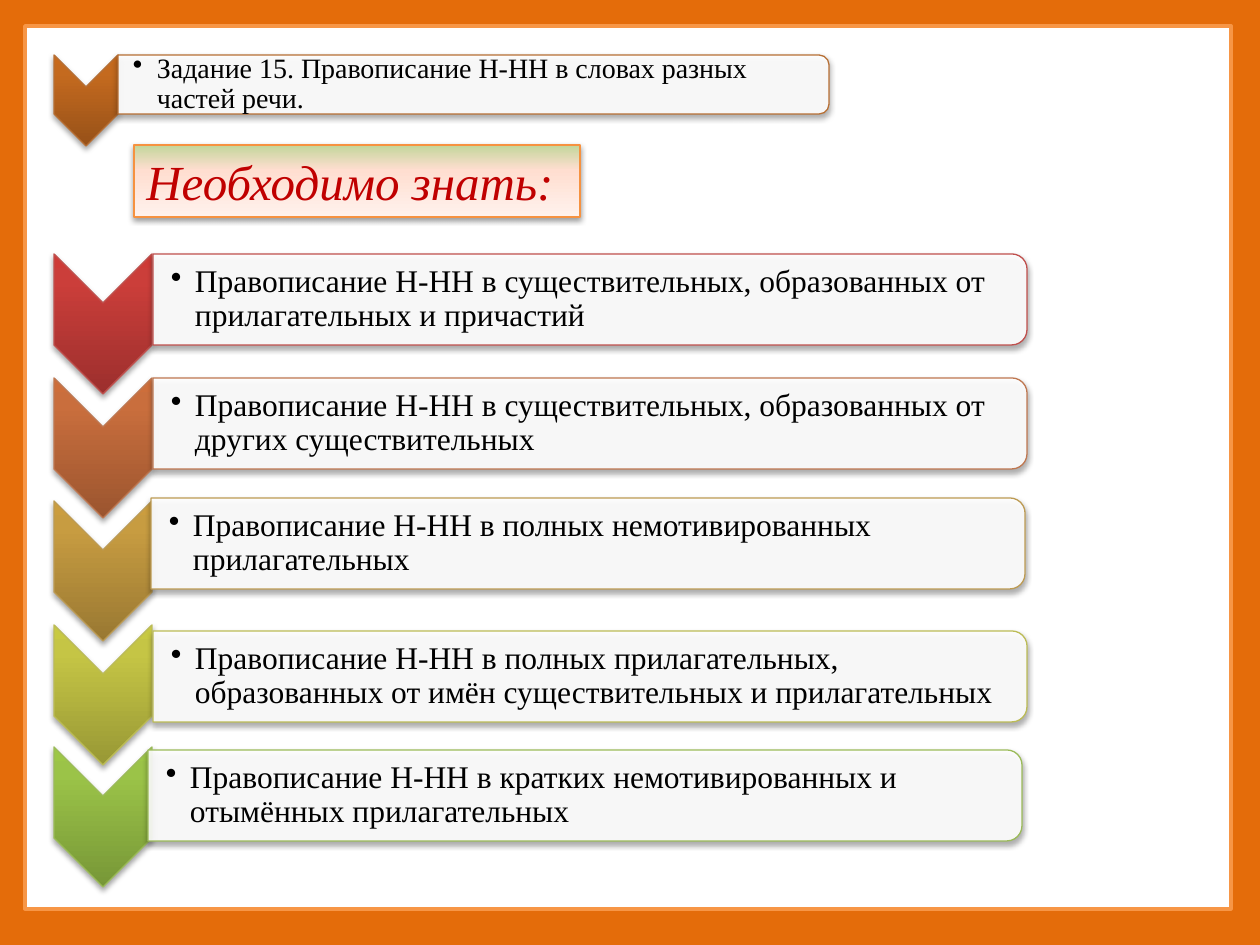
from pptx import Presentation
from pptx.dml.color import RGBColor as RGB
from pptx.enum.shapes import MSO_SHAPE as Geo
from pptx.enum.text import MSO_ANCHOR as Anchor, MSO_AUTO_SIZE as Fit, PP_ALIGN as Align
from pptx.oxml import parse_xml
from pptx.oxml.ns import nsdecls, qn
from pptx.util import Pt

SCALE = 914400 / 126
FONT = "Times New Roman"
BLACK = RGB(0x00, 0x00, 0x00)
WHITE = RGB(0xFF, 0xFF, 0xFF)
ORANGE = RGB(0xE4, 0x6C, 0x0A)
FRAME = RGB(0xF7, 0x96, 0x46)
EDGE = RGB(0xF6, 0x92, 0x40)
RED = RGB(0xC0, 0x00, 0x00)
GREEN = RGB(0xC3, 0xD6, 0x9B)
PEACH = RGB(0xFF, 0xDE, 0xD0)
CREAM = RGB(0xFF, 0xF2, 0xED)
BROWNS = RGB(0x97, 0x51, 0x18), RGB(0xC4, 0x6A, 0x1F), RGB(0xC8, 0x6A, 0x1C), RGB(0xB7, 0x6F, 0x34)
REDS = RGB(0x9C, 0x2F, 0x2D), RGB(0xCB, 0x3E, 0x3A), RGB(0xCE, 0x3B, 0x37), RGB(0xC0, 0x50, 0x4D)
RUSTS = RGB(0x9B, 0x55, 0x2F), RGB(0xC9, 0x6E, 0x3D), RGB(0xCD, 0x6E, 0x3B), RGB(0xBF, 0x77, 0x50)
GOLDS = RGB(0x99, 0x78, 0x32), RGB(0xC7, 0x9C, 0x41), RGB(0xCB, 0x9D, 0x3F), RGB(0xBD, 0x9B, 0x53)
LIMES = RGB(0x98, 0x98, 0x35), RGB(0xC5, 0xC5, 0x45), RGB(0xC8, 0xC9, 0x42), RGB(0xBC, 0xBC, 0x56)
LEAVES = RGB(0x77, 0x97, 0x37), RGB(0x9B, 0xC3, 0x48), RGB(0x9D, 0xC7, 0x46), RGB(0x9B, 0xBB, 0x59)

TASK = "Задание 15. Правописание Н-НН в словах разных частей речи."
RULES = [
    (REDS, 254, 153, 254, "Правописание Н-НН в существительных, образованных от прилагательных и причастий"),
    (RUSTS, 378, 153, 378, "Правописание Н-НН в существительных, образованных от других существительных"),
    (GOLDS, 501, 151, 498, "Правописание Н-НН в полных немотивированных прилагательных"),
    (LIMES, 625, 153, 631, "Правописание Н-НН в полных прилагательных, "
     "образованных от имён существительных и прилагательных"),
    (LEAVES, 747, 148, 750, "Правописание Н-НН в кратких немотивированных и отымённых прилагательных"),
]


def px(n):
    """Turn pixels into EMU."""
    return round(n * SCALE)


def add_shape(shapes, geo, x, y, w, h, line, width=0.75, turn=False):
    """Add an outlined shape that covers the given box, turned by 90 degrees on request."""
    if turn:
        x, y, w, h = x + (w - h) / 2, y + (h - w) / 2, h, w
    shape = shapes.add_shape(geo, px(x), px(y), px(w), px(h))
    shape.rotation = 90 if turn else 0
    shape.line.color.rgb = line
    shape.line.width = Pt(width)
    shape.shadow.inherit = False
    return shape


def fill_flat(shape, color, alpha=100):
    """Fill a shape with one colour at an opacity in percent."""
    shape.fill.solid()
    shape.fill.fore_color.rgb = color
    if alpha < 100:
        tint = shape.fill._xPr.find(".//" + qn("a:srgbClr"))
        tint.append(parse_xml(f'<a:alpha {nsdecls("a")} val="{alpha * 1000}"/>'))


def fill_grad(shape, stops, angle):
    """Fill a shape with a linear gradient that does not turn with it."""
    shape.fill.gradient()
    grad = shape.fill._xPr.find(qn("a:gradFill"))
    grad.set("rotWithShape", "0")
    rows = "".join(f'<a:gs pos="{pos * 1000}"><a:srgbClr val="{color}"/></a:gs>' for pos, color in stops)
    grad.replace(grad.find(qn("a:gsLst")), parse_xml(f'<a:gsLst {nsdecls("a")}>{rows}</a:gsLst>'))
    grad.find(qn("a:lin")).set("ang", str(angle * 60000))


def add_shade(shape, alpha=35, dist=23000):
    """Give a shape a soft shadow below it."""
    shape._element.spPr.find(qn("a:effectLst")).append(parse_xml(
        f'<a:outerShdw {nsdecls("a")} blurRad="40000" dist="{dist}" dir="5400000" rotWithShape="0">'
        f'<a:srgbClr val="{BLACK}"><a:alpha val="{alpha * 1000}"/></a:srgbClr></a:outerShdw>'))


def put_text(shape, text, size, color=BLACK, italic=False, bullet=False, anchor=Anchor.TOP):
    """Write one formatted paragraph into a shape."""
    frame = shape.text_frame
    frame.word_wrap = True
    frame.vertical_anchor = anchor
    par = frame.paragraphs[0]
    par.alignment = Align.LEFT
    run = par.add_run()
    run.text = text
    font = run.font
    font.name, font.size, font.italic = FONT, Pt(size), italic
    font.color.rgb = color
    if bullet:
        par.level = 1
        props = par._p.get_or_add_pPr()
        props.set("marL", str(px(24)))
        props.set("indent", str(px(-24)))
        props.append(parse_xml(f'<a:spcAft {nsdecls("a")}><a:spcPct val="15000"/></a:spcAft>'))
        props.append(parse_xml(f'<a:buChar {nsdecls("a")} char="•"/>'))
        par.line_spacing = 0.9


def add_row(shapes, colors, top, arrow, box, text, size, inset):
    """Add a down chevron, its rounded box and the bulleted text."""
    *tones, line = colors
    mark = add_shape(shapes, Geo.CHEVRON, 54, top, *arrow, line, turn=True)
    fill_grad(mark, zip((0, 80, 100), tones), 270)
    add_shade(mark)
    card = add_shape(shapes, Geo.ROUND_2_SAME_RECTANGLE, *box, line, turn=True)
    fill_flat(card, WHITE, 90)
    add_shade(card)
    x, y, w, h = box
    label = shapes.add_textbox(px(x), px(y + 4), px(w - 5), px(h - 8))
    frame = label.text_frame
    frame.margin_left = px(inset)
    frame.margin_top = frame.margin_right = frame.margin_bottom = px(1)
    put_text(label, text, size, bullet=True, anchor=Anchor.MIDDLE)


def add_head(shapes):
    """Add the heading on its gradient panel."""
    head = add_shape(shapes, Geo.RECTANGLE, 134, 145, 446, 72, EDGE)
    fill_grad(head, [(0, GREEN), (35, PEACH), (100, CREAM)], 90)
    add_shade(head, 38, 20000)
    put_text(head, "Необходимо знать:", 28, color=RED, italic=True)
    head.text_frame.auto_size = Fit.SHAPE_TO_FIT_TEXT


def main():
    """Build the slide and save it."""
    deck = Presentation()
    deck.slide_width, deck.slide_height = px(1260), px(945)
    slide = deck.slides.add_slide(deck.slide_layouts[6])
    back = slide.background.fill
    back.solid()
    back.fore_color.rgb = ORANGE
    shapes = slide.shapes
    fill_flat(add_shape(shapes, Geo.RECTANGLE, 25, 26, 1206, 883, FRAME, width=2), WHITE)
    task = shapes.add_group_shape().shapes
    add_row(task, BROWNS, 55, (64, 91), (118, 55, 711, 59), TASK, 16, 15)
    add_head(shapes)
    rules = shapes.add_group_shape().shapes
    for colors, top, x, y, text in RULES:
        add_row(rules, colors, top, (98, 140), (x, y, 874, 91), text, 18, 18)
    deck.save("out.pptx")


if __name__ == "__main__":
    main()
